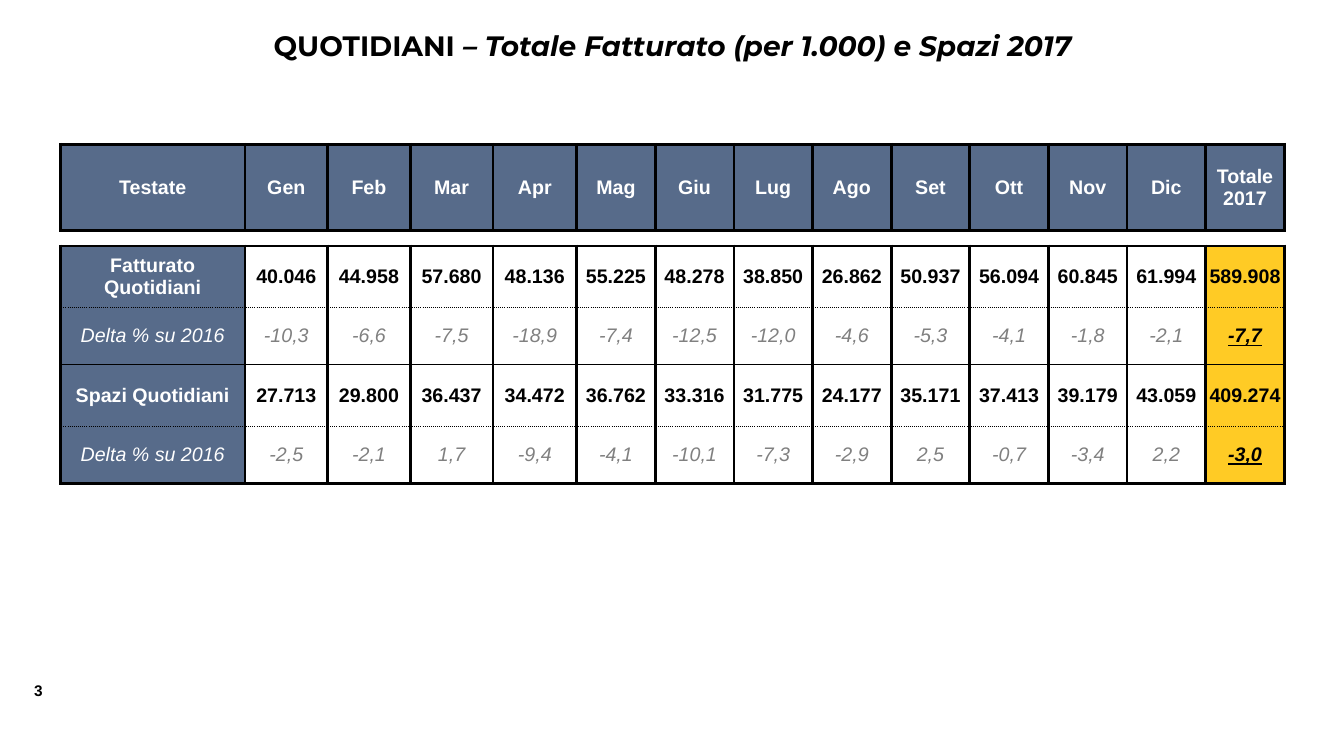
from lxml.etree import SubElement
from pptx import Presentation
from pptx.dml.color import RGBColor
from pptx.enum.text import MSO_ANCHOR, MSO_AUTO_SIZE, PP_ALIGN
from pptx.oxml import parse_xml
from pptx.oxml.ns import nsdecls, qn
from pptx.util import Inches, Pt

BLACK = RGBColor(0x00, 0x00, 0x00)
WHITE = RGBColor(0xFF, 0xFF, 0xFF)
GREY = RGBColor(0x80, 0x80, 0x80)
BLUE = RGBColor(0x57, 0x6B, 0x8A)
GOLD = RGBColor(0xFF, 0xCB, 0x25)

PLAIN = "{2D5ABB26-0587-4C30-8999-92F81FD0307C}"
THICK = (2.25, "solid")
THIN = (1, "solid")
DOTS = (1, "sysDot")

WIDTHS = [1.83] + [0.82] * 3 + [0.83] + [0.78] * 9
HEIGHTS = [0.86, 0.15, 0.61, 0.57, 0.61, 0.57]
EDGES = [THICK, THICK, THICK, DOTS, THIN, DOTS, THICK]
GAP = 1
ROWS = [
    ["Testate", "Gen", "Feb", "Mar", "Apr", "Mag", "Giu", "Lug", "Ago",
     "Set", "Ott", "Nov", "Dic", "Totale\v2017"],
    [""] * 14,
    ["Fatturato Quotidiani", "40.046", "44.958", "57.680", "48.136", "55.225",
     "48.278", "38.850", "26.862", "50.937", "56.094", "60.845", "61.994",
     "589.908"],
    ["Delta % su 2016", "-10,3", "-6,6", "-7,5", "-18,9", "-7,4", "-12,5",
     "-12,0", "-4,6", "-5,3", "-4,1", "-1,8", "-2,1", "-7,7"],
    ["Spazi Quotidiani", "27.713", "29.800", "36.437", "34.472", "36.762",
     "33.316", "31.775", "24.177", "35.171", "37.413", "39.179", "43.059",
     "409.274"],
    ["Delta % su 2016", "-2,5", "-2,1", "1,7", "-9,4", "-4,1", "-10,1",
     "-7,3", "-2,9", "2,5", "-0,7", "-3,4", "2,2", "-3,0"],
]


def style(run, name, size, color, bold=True, italic=False):
    font = run.font
    font.name, font.size = name, Pt(size)
    font.bold, font.italic = bold, italic
    font.color.rgb = color


def add_edge(cell, side, line):
    width, dash = line
    cell._tc.get_or_add_tcPr().append(parse_xml(
        f'<a:ln{side} {nsdecls("a")} w="{Pt(width)}"><a:solidFill>'
        f'<a:srgbClr val="{BLACK}"/></a:solidFill>'
        f'<a:prstDash val="{dash}"/></a:ln{side}>'))


def set_pad(cell, wide, high):
    cell.margin_left = cell.margin_right = Inches(wide)
    cell.margin_top = cell.margin_bottom = Inches(high)


def fill_cell(cell, text, row, col):
    head = row == 0 or col == 0
    total = col == len(WIDTHS) - 1
    delta = row in (3, 5)
    if row != GAP:
        add_edge(cell, "L", THICK)
        add_edge(cell, "R", THICK)
    add_edge(cell, "T", EDGES[row])
    add_edge(cell, "B", EDGES[row + 1])
    para = cell.text_frame.paragraphs[0]
    if row == GAP:
        cell.fill.background()
        set_pad(cell, 0, 0)
        SubElement(para._p, qn("a:endParaRPr")).set("sz", "100")
        return
    if head or total:
        cell.fill.solid()
        cell.fill.fore_color.rgb = BLUE if head else GOLD
    else:
        cell.fill.background()
    set_pad(cell, *((0.1, 0.05) if head else (0, 0)))
    cell.vertical_anchor = MSO_ANCHOR.MIDDLE
    para.text = text
    para.alignment = PP_ALIGN.CENTER
    color = WHITE if head else GREY if delta and not total else BLACK
    for run in para.runs:
        style(run, "Arial", 14, color, not delta or total, delta)
        if delta and total:
            run.font.underline = True


def add_grid(slide, left, top, width, height):
    frame = slide.shapes.add_table(
        len(ROWS), len(WIDTHS), Inches(left), Inches(top),
        Inches(width), Inches(height))
    table = frame.table
    table.first_row = table.horz_banding = False
    table._tbl.tblPr.find(qn("a:tableStyleId")).text = PLAIN
    for col, size in zip(table.columns, WIDTHS):
        col.width = Inches(size)
    for row, size in zip(table.rows, HEIGHTS):
        row.height = Inches(size)
    for row, texts in enumerate(ROWS):
        for col, text in enumerate(texts):
            fill_cell(table.cell(row, col), text, row, col)


def add_title(slide, left, top, width, height):
    title = slide.shapes.title
    title.left, title.top = Inches(left), Inches(top)
    title.width, title.height = Inches(width), Inches(height)
    frame = title.text_frame
    frame.auto_size = MSO_AUTO_SIZE.NONE
    frame.vertical_anchor = MSO_ANCHOR.MIDDLE
    para = frame.paragraphs[0]
    para.alignment = PP_ALIGN.CENTER
    parts = ["QUOTIDIANI ", "– Totale Fatturato (per 1.000) e Spazi 2017"]
    for part, italic in zip(parts, (False, True)):
        run = para.add_run()
        run.text = part
        style(run, "Montserrat", 20, BLACK, italic=italic)


def add_page(slide, left, top, width, height):
    box = slide.shapes.add_textbox(
        Inches(left), Inches(top), Inches(width), Inches(height))
    para = box.text_frame.paragraphs[0]
    para.text = "3"
    style(para.runs[0], "Arial", 11, BLACK)


def main():
    deck = Presentation()
    deck.slide_width, deck.slide_height = Inches(13.33), Inches(7.5)
    slide = deck.slides.add_slide(deck.slide_layouts[5])
    add_page(slide, 0.24, 6.71, 0.42, 0.29)
    add_title(slide, 1.67, 0.23, 10, 0.44)
    add_grid(slide, 0.6, 1.43, sum(WIDTHS), sum(HEIGHTS))
    deck.save("out.pptx")


if __name__ == "__main__":
    main()
